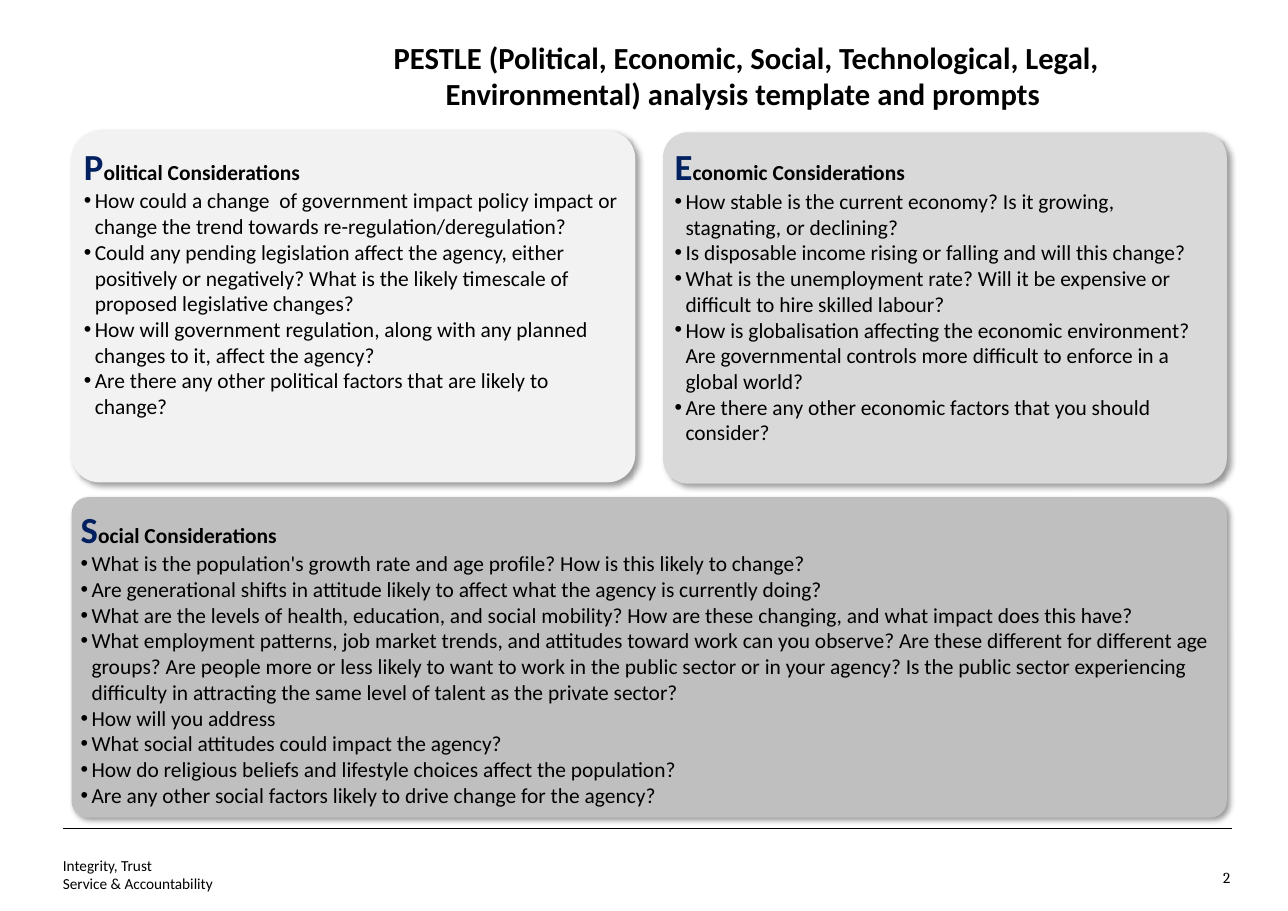
from dataclasses import dataclass

from lxml import etree
from pptx import Presentation
from pptx.dml.color import RGBColor
from pptx.enum.shapes import MSO_CONNECTOR, MSO_SHAPE
from pptx.enum.text import MSO_ANCHOR, PP_ALIGN
from pptx.oxml.ns import qn
from pptx.slide import Slide
from pptx.text.text import TextFrame, _Paragraph
from pptx.util import Cm, Pt

ROUNDED = MSO_SHAPE.ROUNDED_RECTANGLE
STRAIGHT = MSO_CONNECTOR.STRAIGHT
TOP, BOTTOM = MSO_ANCHOR.TOP, MSO_ANCHOR.BOTTOM
LEFT, CENTER, RIGHT = PP_ALIGN.LEFT, PP_ALIGN.CENTER, PP_ALIGN.RIGHT


@dataclass(frozen=True)
class Theme:
    font: str = "Calibri"
    number_font: str = "Cambria"
    ink: str = "000000"
    initial: str = "002060"
    political: str = "F2F2F2"
    economic: str = "D9D9D9"
    social: str = "BFBFBF"
    title_size: int = 20
    initial_size: int = 24
    body_size: int = 14
    footer_size: int = 10


THEME = Theme()


@dataclass(frozen=True)
class Box:
    """Position and size in centimetres."""
    left: float
    top: float
    width: float
    height: float

    def lengths(self) -> tuple[Cm, Cm, Cm, Cm]:
        return Cm(self.left), Cm(self.top), Cm(self.width), Cm(self.height)


@dataclass(frozen=True)
class Panel:
    box: Box
    corner: float
    fill: str
    heading: str
    prompts: tuple[str, ...]


@dataclass(frozen=True)
class Label:
    box: Box
    lines: tuple[str, ...]
    size: int
    font: str = THEME.font
    bold: bool = False
    align: PP_ALIGN = LEFT
    anchor: MSO_ANCHOR = TOP
    inset_x: float = 0
    inset_y: float = 0


PANELS = (
    Panel(Box(1.65, 3.02, 13, 8.1), 0.079, THEME.political, "Political Considerations", (
        "How could a change  of government impact policy impact or change the trend "
        "towards re-regulation/deregulation?",
        "Could any pending legislation affect the agency, either positively or negatively? "
        "What is the likely timescale of proposed legislative changes?",
        "How will government regulation, along with any planned changes to it, affect the agency?",
        "Are there any other political factors that are likely to change?",
    )),
    Panel(Box(15.29, 3.05, 13, 8.1), 0.071, THEME.economic, "Economic Considerations", (
        "How stable is the current economy? Is it growing, stagnating, or declining?",
        "Is disposable income rising or falling and will this change?",
        "What is the unemployment rate? Will it be expensive or difficult to hire skilled labour?",
        "How is globalisation affecting the economic environment? Are governmental controls "
        "more difficult to enforce in a global world?",
        "Are there any other economic factors that you should consider?",
    )),
    Panel(Box(1.65, 11.46, 26.64, 7.39), 0.052, THEME.social, "Social Considerations", (
        "What is the population's growth rate and age profile? How is this likely to change?",
        "Are generational shifts in attitude likely to affect what the agency is currently doing?",
        "What are the levels of health, education, and social mobility? How are these changing, "
        "and what impact does this have?",
        "What employment patterns, job market trends, and attitudes toward work can you observe? "
        "Are these different for different age groups? Are people more or less likely to want to "
        "work in the public sector or in your agency? Is the public sector experiencing "
        "difficulty in attracting the same level of talent as the private sector?",
        "How will you address",
        "What social attitudes could impact the agency?",
        "How do religious beliefs and lifestyle choices affect the population?",
        "Are any other social factors likely to drive change for the agency?",
    )),
)

LABELS = (
    Label(Box(6.86, 0.74, 20.7, 1.85),
          ("PESTLE (Political, Economic, Social, Technological, Legal, "
           "Environmental) analysis template and prompts ",),
          THEME.title_size, bold=True, align=CENTER, inset_x=0.28, inset_y=0.15),
    Label(Box(1.45, 19.46, 9.4, 1.12), ("Integrity, Trust", "Service & Accountability"),
          THEME.footer_size, anchor=BOTTOM),
    Label(Box(27.84, 20.02, 0.53, 0.43), ("2",), THEME.footer_size,
          font=THEME.number_font, align=RIGHT),
)


def add_run(paragraph: _Paragraph, text: str, size: int, bold: bool = False,
            color: str = THEME.ink, font: str = THEME.font) -> None:
    run = paragraph.add_run()
    run.text = text
    run.font.name = font
    run.font.size = Pt(size)
    run.font.bold = bold
    run.font.color.rgb = RGBColor.from_string(color)


def set_frame(frame: TextFrame, inset_x: float, inset_y: float, anchor: MSO_ANCHOR) -> None:
    frame.word_wrap = True
    frame.vertical_anchor = anchor
    frame.margin_left = frame.margin_right = Cm(inset_x)
    frame.margin_top = frame.margin_bottom = Cm(inset_y)


def add_bullet(paragraph: _Paragraph) -> None:
    """Hang the paragraph on a round bullet."""
    properties = paragraph._p.get_or_add_pPr()
    properties.set("marL", str(Cm(0.25)))
    properties.set("indent", str(-Cm(0.25)))
    etree.SubElement(properties, qn("a:buFont")).set("typeface", "Arial")
    etree.SubElement(properties, qn("a:buChar")).set("char", "•")


def add_panel(slide: Slide, panel: Panel) -> None:
    shape = slide.shapes.add_shape(ROUNDED, *panel.box.lengths())
    shape.adjustments[0] = panel.corner
    shape.fill.solid()
    shape.fill.fore_color.rgb = RGBColor.from_string(panel.fill)
    shape.line.fill.background()
    shape.shadow.inherit = False
    effects = shape._element.spPr.find(qn("a:effectLst"))
    shadow = etree.SubElement(effects, qn("a:outerShdw"), blurRad=str(Pt(4)), dist=str(Pt(3)),
                              dir="2700000", algn="tl", rotWithShape="0")
    color = etree.SubElement(shadow, qn("a:srgbClr"), val=THEME.ink)
    etree.SubElement(color, qn("a:alpha"), val="40000")

    frame = shape.text_frame
    set_frame(frame, 0.1, 0.1, TOP)
    heading = frame.paragraphs[0]
    heading.alignment = LEFT
    add_run(heading, panel.heading[0], THEME.initial_size, True, THEME.initial)
    add_run(heading, panel.heading[1:], THEME.body_size, True)
    for prompt in panel.prompts:
        paragraph = frame.add_paragraph()
        paragraph.alignment = LEFT
        add_bullet(paragraph)
        add_run(paragraph, prompt, THEME.body_size)


def add_label(slide: Slide, label: Label) -> None:
    frame = slide.shapes.add_textbox(*label.box.lengths()).text_frame
    set_frame(frame, label.inset_x, label.inset_y, label.anchor)
    paragraph = frame.paragraphs[0]
    paragraph.alignment = label.align
    for index, line in enumerate(label.lines):
        if index:
            paragraph.add_line_break()
        add_run(paragraph, line, label.size, label.bold, font=label.font)


def add_footer_rule(slide: Slide) -> None:
    rule = slide.shapes.add_connector(STRAIGHT, Cm(1.45), Cm(19.1), Cm(28.4), Cm(19.1))
    rule.line.color.rgb = RGBColor.from_string(THEME.ink)
    rule.line.width = Pt(0.5)
    etree.SubElement(rule._element.spPr, qn("a:effectLst"))


def main() -> None:
    presentation = Presentation()
    presentation.slide_width, presentation.slide_height = Cm(29.7), Cm(21)
    slide = presentation.slides.add_slide(presentation.slide_layouts[6])
    add_footer_rule(slide)
    for panel in PANELS:
        add_panel(slide, panel)
    for label in LABELS:
        add_label(slide, label)
    presentation.save("out.pptx")


if __name__ == "__main__":
    main()
